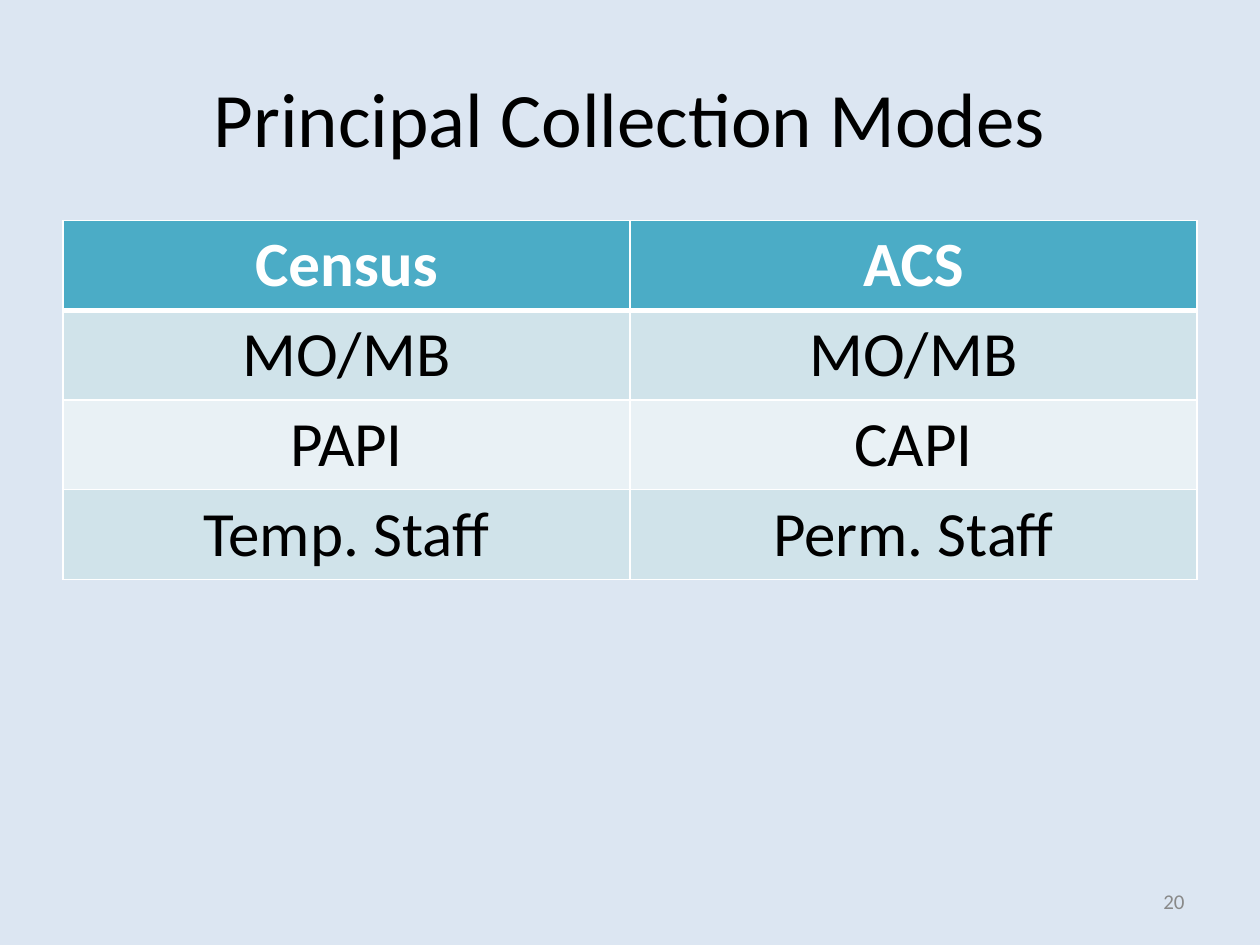
from lxml import etree
from pptx import Presentation
from pptx.dml.color import RGBColor
from pptx.enum import text
from pptx.oxml import ns
from pptx.util import Inches, Pt

BACKGROUND = RGBColor(0xDC, 0xE6, 0xF2)
HEADER = RGBColor(0x4B, 0xAC, 0xC6)
BANDS = [RGBColor(0xE9, 0xF1, 0xF5), RGBColor(0xD0, 0xE3, 0xEA)]
WHITE = RGBColor(0xFF, 0xFF, 0xFF)
BLACK = RGBColor(0x00, 0x00, 0x00)
GREY = RGBColor(0x89, 0x89, 0x89)

MODES = [
    ("Census", "ACS"),
    ("MO/MB", "MO/MB"),
    ("PAPI", "CAPI"),
    ("Temp. Staff", "Perm. Staff"),
]


def write(frame, words, size, color, align, bold=False):
    frame.text = words
    paragraph = frame.paragraphs[0]
    paragraph.alignment = align
    font = paragraph.runs[0].font
    font.color.rgb = color
    for name, value in {"name": "Calibri", "size": Pt(size), "bold": bold}.items():
        setattr(font, name, value)


def add_border(cell, side, width):
    line = etree.SubElement(cell._tc.get_or_add_tcPr(), ns.qn(f"a:ln{side}"), w=str(Pt(width)))
    fill = etree.SubElement(line, ns.qn("a:solidFill"))
    etree.SubElement(fill, ns.qn("a:srgbClr"), val=str(WHITE))


deck = Presentation()
deck.slide_width, deck.slide_height = Inches(10), Inches(7.5)
slide = deck.slides.add_slide(deck.slide_layouts[5])
slide.background.fill.solid()
slide.background.fill.fore_color.rgb = BACKGROUND

heading = slide.shapes.title
heading.left, heading.top = Inches(0.5), Inches(0.3)
heading.width, heading.height = Inches(9), Inches(1.25)
heading.text_frame.vertical_anchor = text.MSO_ANCHOR.MIDDLE
write(heading.text_frame, "Principal Collection Modes", 44, BLACK, text.PP_ALIGN.CENTER)

comparison = slide.shapes.add_table(
    len(MODES), 2, Inches(0.5), Inches(1.75), Inches(9), Inches(0.71 * len(MODES))
).table
for r, row in enumerate(MODES):
    for c, mode in enumerate(row):
        cell = comparison.cell(r, c)
        is_header = r == 0
        widths = {"L": 1, "R": 1, "T": 3 if r == 1 else 1, "B": 3 if is_header else 1}
        for side, width in widths.items():
            add_border(cell, side, width)
        cell.fill.solid()
        cell.fill.fore_color.rgb = HEADER if is_header else BANDS[r % 2]
        write(cell.text_frame, mode, 36, WHITE if is_header else BLACK,
              text.PP_ALIGN.CENTER, bold=is_header)

page_number = slide.shapes.add_textbox(
    Inches(7.17), Inches(6.95), Inches(2.33), Inches(0.4)).text_frame
page_number.word_wrap = True
page_number.vertical_anchor = text.MSO_ANCHOR.MIDDLE
write(page_number, "20", 12, GREY, text.PP_ALIGN.RIGHT)

deck.save("out.pptx")
